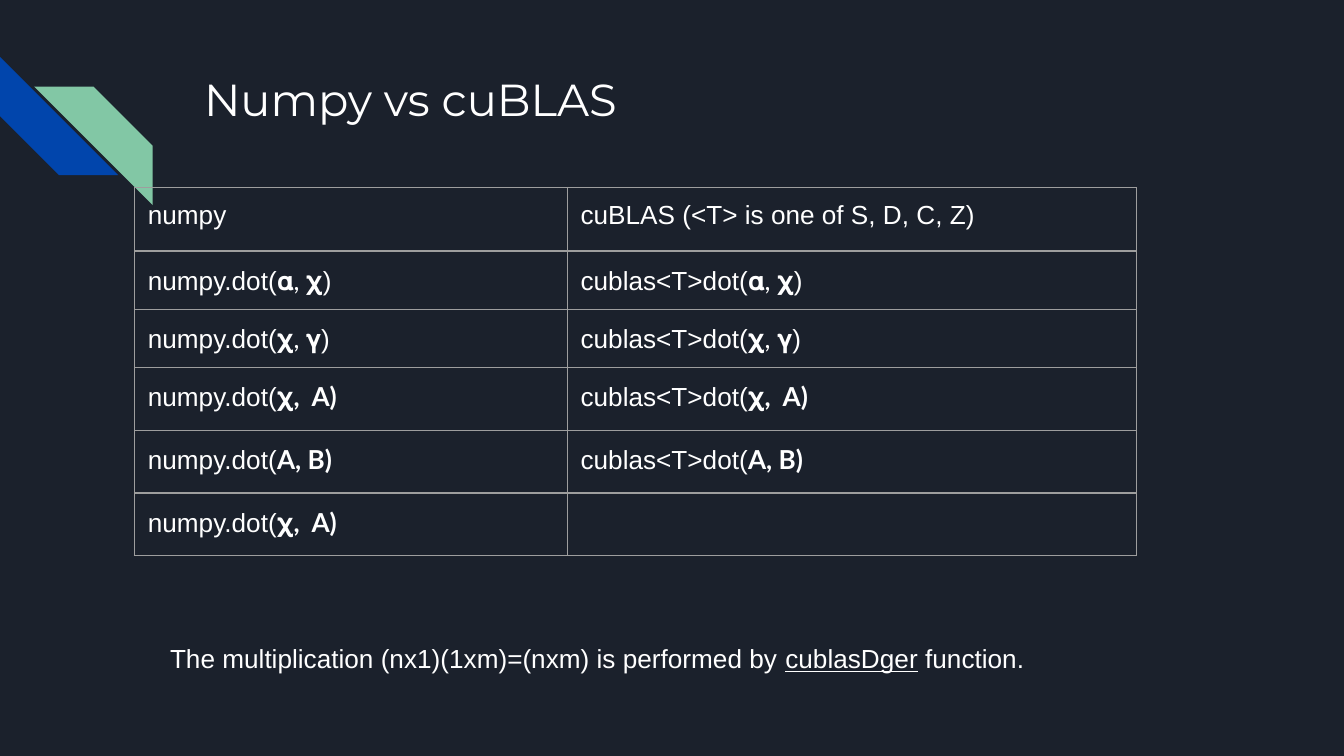
"""Build a slide comparing numpy calls with their cuBLAS counterparts."""
from dataclasses import dataclass

from lxml import etree
from pptx import Presentation, util as u
from pptx.dml.color import RGBColor
from pptx.enum import shapes, text
from pptx.oxml.ns import qn

COLORS = {"bg": "1B212C", "blue": "0145AC", "green": "82C7A5",
          "text": "FFFFFF", "border": "9E9E9E"}
W = u.Inches(10)
H = W * 9 // 16
BODY_PT = 14


@dataclass(frozen=True)
class Span:
    text: str
    font: str = "Arial"
    size: int = BODY_PT
    bold: bool = False
    underline: bool = False


@dataclass(frozen=True)
class Box:
    """Position and size as percentages of the slide."""
    left: float
    top: float
    width: float
    height: float

    def emu(self) -> tuple[int, int, int, int]:
        return (share(W, self.left), share(H, self.top),
                share(W, self.width), share(H, self.height))


@dataclass(frozen=True)
class Stripe:
    left: float
    top: float
    rotation: int
    color: str


STRIPE_SIZE = 8.82
STRIPES = [Stripe(0, 7.5, 270, "blue"), Stripe(2.53, 11.45, 90, "green")]
TITLE_BOX = Box(14.2, 7.72, 77, 17.8)
TABLE_BOX = Box(10, 24.8, 74.55, 48.7)
NOTE_BOX = Box(11.67, 84.1, 68.3, 6.05)
COLUMNS = [32.2, 42.35]
ROWS = [8.4, 7.7, 7.7, 8.3, 8.3, 8.3]

TITLE = [Span("Numpy vs cuBLAS", "Montserrat", 24)]
NOTE = [Span("The multiplication (nx1)(1xm)=(nxm) is performed by "),
        Span("cublasDger", underline=True), Span(" function.")]
CALLS = ["numpy.dot(", "cublas<T>dot("]
VECTOR_MATRIX = [Span("𝛘", "Lato"), Span(",  A)", "Lato", bold=True)]
ARGUMENTS = [
    [Span("𝛂, 𝛘", "Lato"), Span(")")],
    [Span("𝛘, 𝛄", "Lato"), Span(")")],
    VECTOR_MATRIX,
    [Span("A, B)", "Lato", bold=True)],
]
HEADER = [[Span("numpy")], [Span("cuBLAS (<T> is one of S, D, C, Z)")]]
CELLS = [
    HEADER,
    *[[[Span(call), *args] for call in CALLS] for args in ARGUMENTS],
    [[Span(CALLS[0]), *VECTOR_MATRIX], []],
]


def share(total: int, percent: float) -> int:
    return round(total * percent / 100)


def rgb(name: str) -> RGBColor:
    return RGBColor.from_string(COLORS[name])


def write(tf, spans: list[Span]) -> None:
    p = tf.paragraphs[0]
    for span in spans:
        r = p.add_run()
        r.text = span.text
        r.font.name = span.font
        r.font.size = u.Pt(span.size)
        r.font.bold = span.bold
        r.font.underline = span.underline
        r.font.color.rgb = rgb("text")
    if not spans:
        etree.SubElement(p._p, qn("a:endParaRPr"), sz=str(BODY_PT * 100))


def draw_stripe(s, stripe: Stripe) -> None:
    size = share(W, STRIPE_SIZE)
    sp = s.shapes.add_shape(shapes.MSO_SHAPE.DIAGONAL_STRIPE, share(W, stripe.left),
                            share(H, stripe.top), size, size)
    sp.rotation = stripe.rotation
    sp.adjustments[0] = 0.5
    sp.shadow.inherit = False
    sp.fill.solid()
    sp.fill.fore_color.rgb = rgb(stripe.color)
    sp.line.fill.background()


def draw_text(s, box: Box, spans: list[Span], inset: float) -> None:
    tf = s.shapes.add_textbox(*box.emu()).text_frame
    tf.word_wrap = True
    tf.vertical_anchor = text.MSO_ANCHOR.TOP
    tf.margin_top = tf.margin_bottom = u.Inches(inset)
    write(tf, spans)


def set_borders(cell) -> None:
    tc_pr = cell._tc.get_or_add_tcPr()
    for i, side in enumerate(("lnL", "lnR", "lnT", "lnB")):
        ln = etree.Element(qn(f"a:{side}"), w=str(u.Pt(0.75)))
        fill = etree.SubElement(ln, qn("a:solidFill"))
        etree.SubElement(fill, qn("a:srgbClr"), val=COLORS["border"])
        tc_pr.insert(i, ln)


def draw_table(s) -> None:
    table = s.shapes.add_table(len(ROWS), len(COLUMNS), *TABLE_BOX.emu()).table
    table.first_row = table.horz_banding = False
    for col, width in zip(table.columns, COLUMNS):
        col.width = share(W, width)
    for row, height, contents in zip(table.rows, ROWS, CELLS):
        row.height = share(H, height)
        for cell, spans in zip(row.cells, contents):
            cell.margin_left = cell.margin_right = u.Inches(0.1)
            cell.margin_top = cell.margin_bottom = u.Inches(0.1)
            cell.fill.background()
            set_borders(cell)
            write(cell.text_frame, spans)


def main() -> None:
    prs = Presentation()
    prs.slide_width, prs.slide_height = W, H
    s = prs.slides.add_slide(prs.slide_layouts[6])
    s.background.fill.solid()
    s.background.fill.fore_color.rgb = rgb("bg")
    for stripe in STRIPES:
        draw_stripe(s, stripe)
    draw_text(s, TITLE_BOX, TITLE, 0.1)
    draw_table(s)
    draw_text(s, NOTE_BOX, NOTE, 0.05)
    prs.save("out.pptx")


if __name__ == "__main__":
    main()
